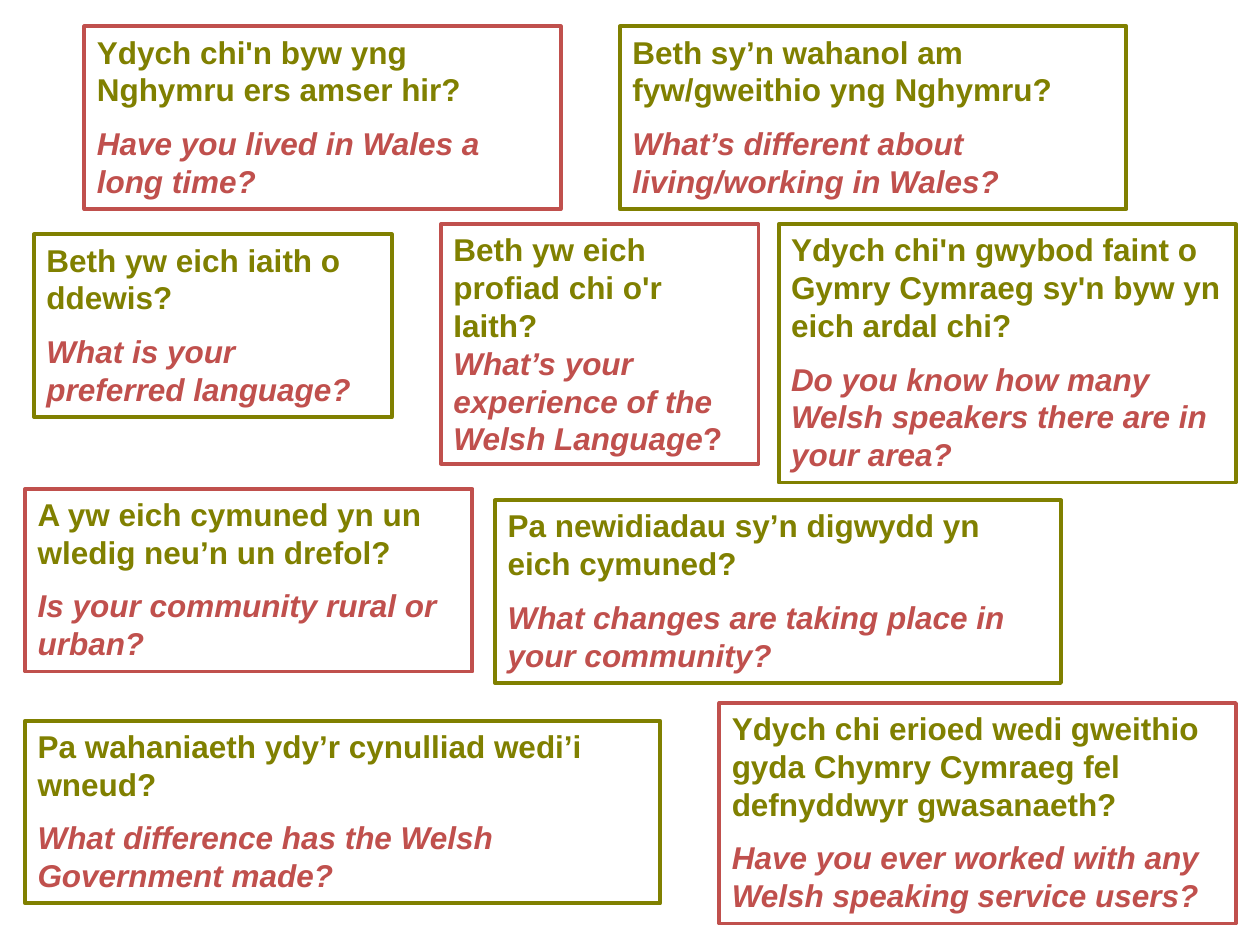
from pptx import Presentation, util as u
from pptx.dml.color import RGBColor
from pptx.enum import shapes, text

OLIVE = RGBColor(0x80, 0x80, 0x00)
RED = RGBColor(0xC0, 0x50, 0x4D)
PX = u.Inches(1) // 100

# left, top, width, height, border, Welsh question, English question
CARDS = [
    (67, 21, 378, 145, RED, "Ydych chi'n byw yng Nghymru ers amser hir?",
     "Have you lived in Wales a long time?"),
    (27, 186, 284, 145, OLIVE, "Beth yw eich iaith o ddewis?",
     "What is your preferred language?"),
    (618, 178, 363, 205, OLIVE,
     "Ydych chi'n gwybod faint o Gymry Cymraeg sy'n byw yn eich ardal chi?",
     "Do you know how many Welsh speakers there are in your area?"),
    (571, 558, 410, 175, RED,
     "Ydych chi erioed wedi gweithio gyda Chymry Cymraeg fel defnyddwyr gwasanaeth?",
     "Have you ever worked with any Welsh speaking service users?"),
    (393, 397, 449, 145, OLIVE, "Pa newidiadau sy’n digwydd yn eich cymuned?",
     "What changes are taking place in your community?"),
    (20, 388, 355, 145, RED, "A yw eich cymuned yn un wledig neu’n un drefol?",
     "Is your community rural or urban?"),
    (492, 21, 402, 145, OLIVE, "Beth sy’n wahanol am fyw/gweithio yng Nghymru?",
     "What’s different about living/working in Wales?"),
    (20, 572, 504, 145, OLIVE, "Pa wahaniaeth ydy’r cynulliad wedi’i wneud?",
     "What difference has the Welsh Government made?"),
]


class QuestionSlide:
    """Holds the slide and the shared style of its bilingual cards."""

    font_name = "Arial"
    font_size = u.Pt(18)
    border_width = u.Pt(2.25)

    def __init__(self, slide):
        self.slide = slide

    def style(self, paragraph, color, italic=False):
        font = paragraph.font
        font.name, font.size, font.bold = self.font_name, self.font_size, True
        font.color.rgb = color
        if italic:
            font.italic = True
        paragraph.alignment = text.PP_ALIGN.LEFT

    def card(self, left, top, width, height, border, welsh, english, gap=9):
        """Add a bordered card and return its English paragraph."""
        box = self.slide.shapes.add_shape(
            shapes.MSO_SHAPE.RECTANGLE,
            *(value * PX for value in (left, top, width, height)))
        box.shadow.inherit = False
        box.fill.background()
        box.line.color.rgb = border
        box.line.width = self.border_width
        frame = box.text_frame
        frame.word_wrap = True
        frame.auto_size = text.MSO_AUTO_SIZE.SHAPE_TO_FIT_TEXT
        frame.vertical_anchor = text.MSO_ANCHOR.TOP
        question = frame.paragraphs[0]
        question.text = welsh
        self.style(question, OLIVE)
        translation = frame.add_paragraph()
        translation.text = english
        translation.space_before = u.Pt(gap)
        self.style(translation, RED, italic=True)
        return translation


def main():
    deck = Presentation()
    deck.slide_width, deck.slide_height = 1000 * PX, 750 * PX
    page = QuestionSlide(deck.slides.add_slide(deck.slide_layouts[6]))

    experience = page.card(350, 178, 252, 190, RED,
                           "Beth yw eich profiad chi o'r Iaith?",
                           "What’s your experience of the Welsh Language", gap=0)
    question_mark = experience.add_run()
    question_mark.text = "?"
    question_mark.font.italic = False

    for card in CARDS:
        page.card(*card)
    deck.save("out.pptx")


if __name__ == "__main__":
    main()
